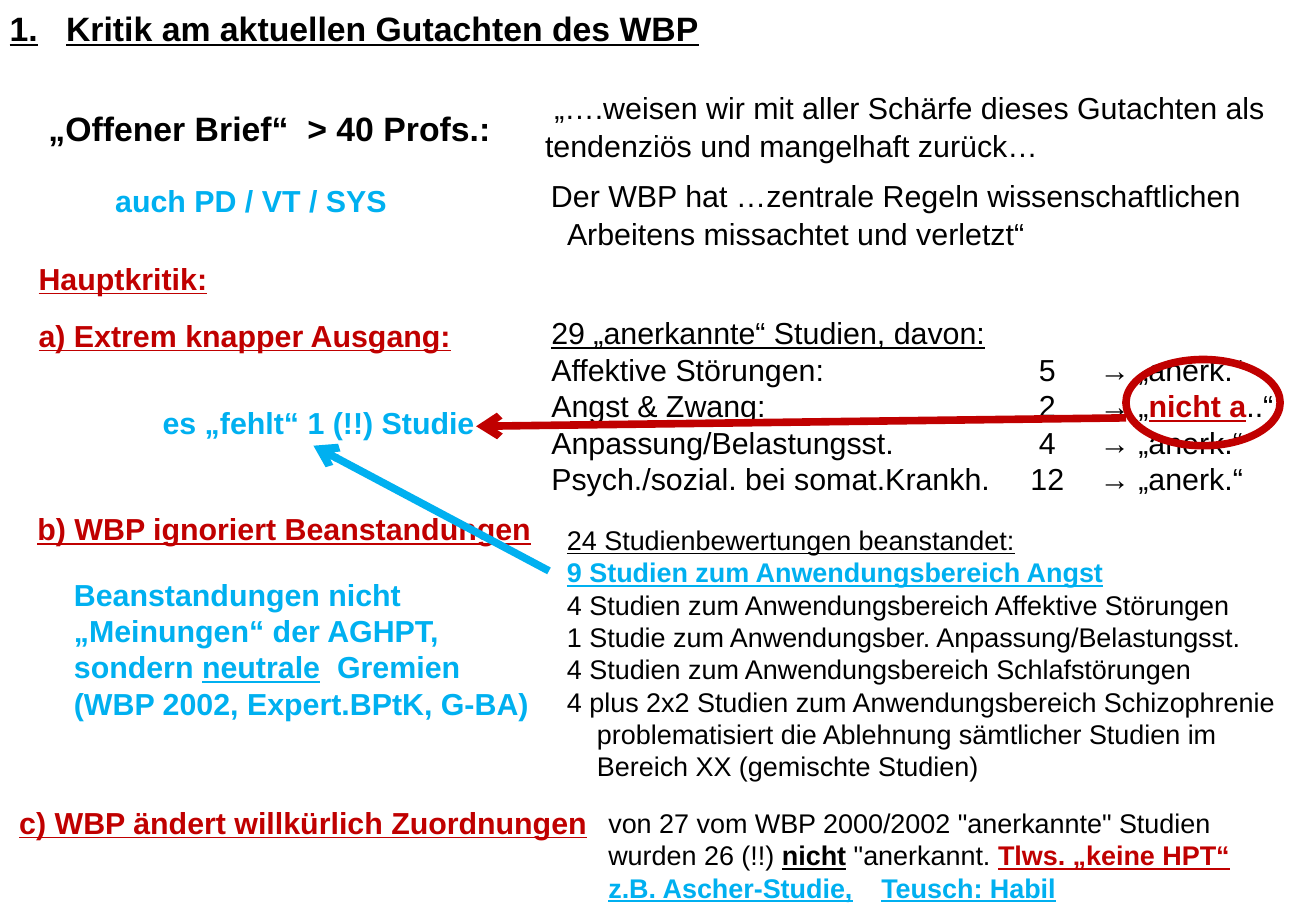
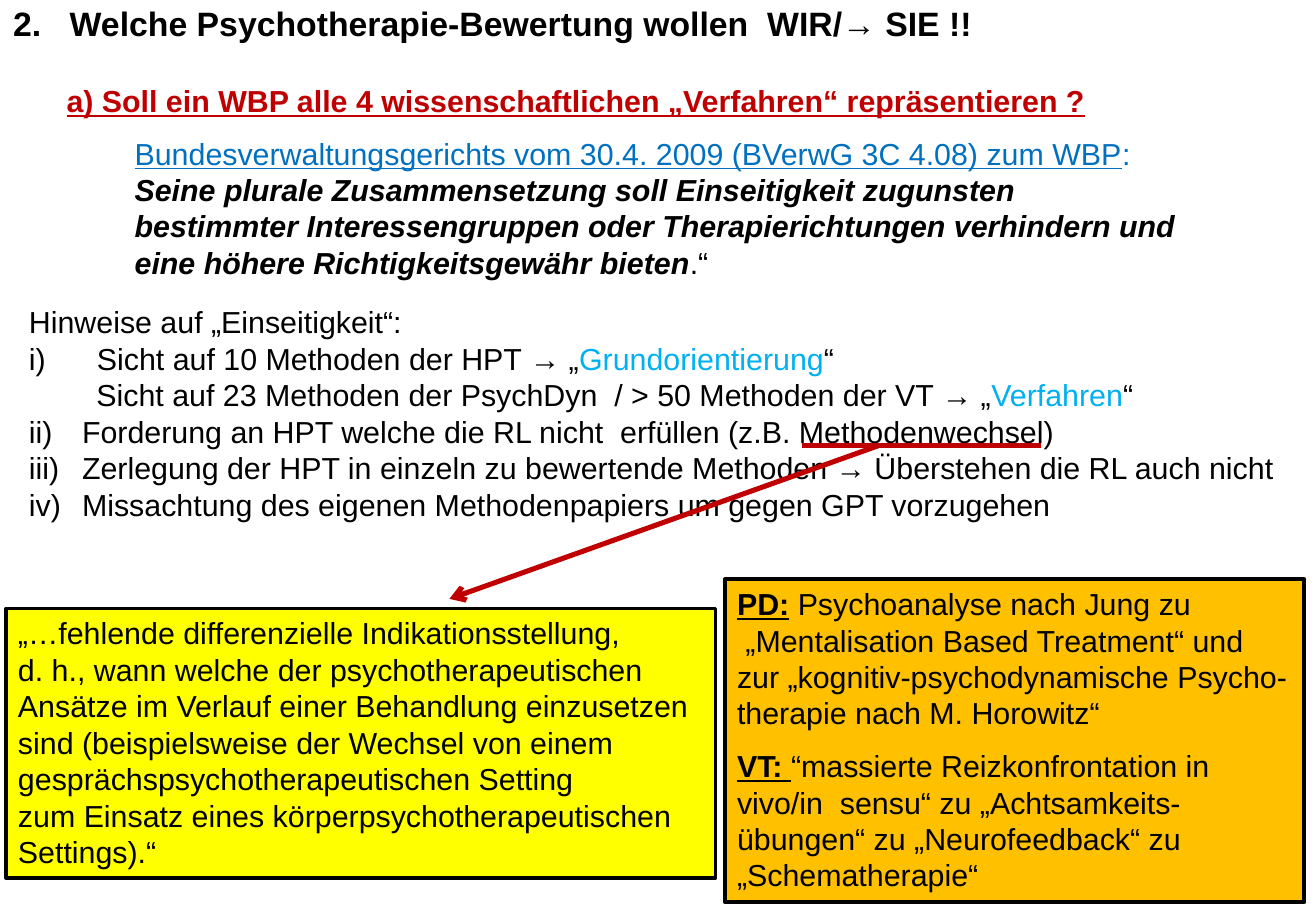
from lxml import etree
from pptx import Presentation
from pptx.dml.color import RGBColor
from pptx.enum.shapes import MSO_CONNECTOR, MSO_SHAPE
from pptx.enum.text import MSO_ANCHOR, PP_ALIGN
from pptx.oxml.ns import qn
from pptx.util import Pt

RECT, OVAL = MSO_SHAPE.RECTANGLE, MSO_SHAPE.OVAL
LINE = MSO_CONNECTOR.STRAIGHT
TOP, MIDDLE = MSO_ANCHOR.TOP, MSO_ANCHOR.MIDDLE
LEFT = PP_ALIGN.LEFT
BLACK, RED, CYAN, BLUE = "000000", "C00000", "00B0F0", "0070C0"
YELLOW, ORANGE = "FFFF00", "FFC000"


def color(code):
    return RGBColor.from_string(code)


class Deck:
    face = "Arial"
    size = 18

    def __init__(self, width, height):
        self.show = Presentation()
        self.show.slide_width, self.show.slide_height = Pt(width), Pt(height)

    def page(self, title, left, top, width, style):
        self.slide = self.show.slides.add_slide(self.show.slide_layouts[6])
        frame = self.text(left, top, width, 31.7, [title], style=style, size=20)
        frame.vertical_anchor = MIDDLE
        self.indent(frame.paragraphs[0], 33.5, -33.5)

    def style(self, run, size, ink, style):
        font = run.font
        font.name, font.size = self.face, Pt(size)
        font.color.rgb = color(ink)
        font.bold, font.italic, font.underline = (key in style for key in "biu")

    def rows(self, shape, rows, ink, style, size, lead):
        frame = shape.text_frame
        frame.word_wrap = True
        frame.vertical_anchor = TOP
        for index, row in enumerate(rows):
            para = frame.add_paragraph() if index else frame.paragraphs[0]
            para.alignment = LEFT
            para.line_spacing = Pt(lead or size * 1.2)
            if isinstance(row, str):
                para.text = row
                self.style(para.runs[0], size, ink, style)
                continue
            for text, tint, look in row:
                run = para.add_run()
                run.text = text
                self.style(run, size, tint, look)
        return frame

    def text(self, left, top, width, height, rows, ink=BLACK, style="", size=size, lead=None):
        box = self.slide.shapes.add_textbox(Pt(left), Pt(top), Pt(width), Pt(height))
        return self.rows(box, rows, ink, style, size, lead)

    def head(self, left, top, width, text):
        self.text(left, top, width, 28.8, [text], RED, "bu")

    def shape(self, kind, left, top, width, height, ink, weight, fill=None):
        shape = self.slide.shapes.add_shape(kind, Pt(left), Pt(top), Pt(width), Pt(height))
        shape.shadow.inherit = False
        if fill:
            shape.fill.solid()
            shape.fill.fore_color.rgb = color(fill)
        else:
            shape.fill.background()
        shape.line.color.rgb = color(ink)
        shape.line.width = Pt(weight)
        return shape

    def panel(self, left, top, width, height, fill, rows):
        shape = self.shape(RECT, left, top, width, height, BLACK, 2.25, fill)
        return self.rows(shape, rows, BLACK, "", self.size, None)

    def line(self, x1, y1, x2, y2, ink, weight, arrow=True):
        line = self.slide.shapes.add_connector(LINE, Pt(x1), Pt(y1), Pt(x2), Pt(y2))
        line.line.color.rgb = color(ink)
        line.line.width = Pt(weight)
        props = line._element.spPr
        if arrow:
            etree.SubElement(props.find(qn("a:ln")), qn("a:tailEnd"), type="arrow")
        etree.SubElement(props, qn("a:effectLst"))

    def indent(self, para, left, first=0):
        props = para._p.get_or_add_pPr()
        props.set("marL", str(int(Pt(left))))
        props.set("indent", str(int(Pt(first))))

    def number(self, para, left, start):
        self.indent(para, left, -left)
        etree.SubElement(para._p.get_or_add_pPr(), qn("a:buAutoNum"),
                         type="romanLcParenR", startAt=str(start))

    def tabs(self, para, *stops):
        tabs = etree.SubElement(para._p.get_or_add_pPr(), qn("a:tabLst"))
        for place, align in stops:
            etree.SubElement(tabs, qn("a:tab"), pos=str(int(Pt(place))), algn=align)


def review(deck):
    deck.page("1.\tKritik am aktuellen Gutachten des WBP", -1.4, 0.7, 529, "bu")
    deck.text(21.6, 60.5, 294.5, 31.7, ["„Offener Brief“  > 40 Profs.:"], style="b", size=20)
    quote = deck.text(316, 48.2, 463.7, 53.3, [
        "„….weisen wir mit aller Schärfe dieses Gutachten als "
        "tendenziös und mangelhaft zurück…"], lead=22.5)
    deck.indent(quote.paragraphs[0], 0, 5.5)
    rules = deck.text(314, 100.8, 438.5, 53.3, [
        "Der WBP hat …zentrale Regeln wissenschaftlichen",
        "Arbeitens missachtet und verletzt“"], lead=22.5)
    for para, left in zip(rules.paragraphs, (5.5, 15)):
        deck.indent(para, left)
    deck.text(61.2, 104.4, 177, 28.8, ["auch PD / VT / SYS"], CYAN, "b")
    deck.head(15.8, 150.5, 115, "Hauptkritik:")
    deck.head(15.8, 184.3, 272, "a) Extrem knapper Ausgang:")

    studies = deck.text(319.7, 182.9, 460, 116.6, [
        [("29 „anerkannte“ Studien, davon:", BLACK, "u")],
        "Affektive Störungen:\t5\t→ „anerk.“",
        [("Angst & Zwang:\t2\t→ „", BLACK, ""), ("nicht a", RED, "bu"), ("..“", BLACK, "")],
        "Anpassung/Belastungsst.\t4\t→ „anerk.“",
        "Psych./sozial. bei somat.Krankh.\t12\t→ „anerk.“"])
    for para in studies.paragraphs[1:]:
        deck.tabs(para, (294, "ctr"), (325, "l"))
    deck.shape(OVAL, 667.4, 213.1, 91.4, 51.1, RED, 4.5)
    deck.line(667.4, 247.7, 282.2, 252.7, RED, 4.5)
    deck.text(89.3, 236.2, 206.6, 28.8, ["es „fehlt“ 1 (!!) Studie"], CYAN, "b")

    deck.head(15.1, 298.8, 312, "b) WBP ignoriert Beanstandungen")
    claims = deck.text(329, 306.7, 437, 162.7, [
        [("24 Studienbewertungen beanstandet:", BLACK, "u")],
        [("9 Studien zum Anwendungsbereich Angst", CYAN, "bu")],
        "4 Studien zum Anwendungsbereich Affektive Störungen",
        "1 Studie zum Anwendungsber. Anpassung/Belastungsst.",
        "4 Studien zum Anwendungsbereich Schlafstörungen",
        "4 plus 2x2 Studien zum Anwendungsbereich Schizophrenie",
        "problematisiert die Ablehnung sämtlicher Studien im",
        "Bereich XX (gemischte Studien)"], size=16)
    for para in claims.paragraphs[-2:]:
        deck.indent(para, 17.8)
    deck.line(325.4, 338.4, 185.8, 264.2, CYAN, 4.5)
    deck.text(36.7, 337.7, 290, 94.3, [
        "Beanstandungen nicht",
        "„Meinungen“ der AGHPT,",
        [("sondern ", CYAN, "b"), ("neutrale", CYAN, "bu"), ("  Gremien", CYAN, "b")],
        "(WBP 2002, Expert.BPtK, G-BA)"], CYAN, "b")

    deck.head(4.3, 473, 365.8, "c) WBP ändert willkürlich Zuordnungen")
    change = deck.text(353.5, 474.5, 388, 65.5, [
        "von 27 vom WBP 2000/2002 \"anerkannte\" Studien",
        [("wurden 26 (!!) ", BLACK, ""), ("nicht", BLACK, "bu"),
         (" \"anerkannt. ", BLACK, ""), ("Tlws. „keine HPT“", RED, "bu")],
        [("z.B. Ascher-Studie,\tTeusch: Habil", CYAN, "bu")]], size=16)
    deck.tabs(change.paragraphs[2], (161.8, "l"))


def wishes(deck):
    deck.page("2.\tWelche Psychotherapie-Bewertung wollen  WIR/→ SIE !!", 0.7, -2.2, 610.6, "b")
    deck.head(32.4, 45.4, 626, "a) Soll ein WBP alle 4 wissenschaftlichen „Verfahren“ repräsentieren ?")
    deck.text(72.7, 76.3, 635, 94.3, [
        [("Bundesverwaltungsgerichts vom 30.4. 2009 (BVerwG 3C 4.08) zum WBP", BLUE, "u"),
         (":", BLUE, "")],
        [("Seine plurale Zusammensetzung soll Einseitigkeit zugunsten "
          "bestimmter Interessengruppen oder Therapierichtungen verhindern und "
          "eine höhere Richtigkeitsgewähr bieten", BLACK, "bi"), (".“", BLACK, "")]])

    hints = deck.text(10.1, 176.4, 762, 138.2, [
        "Hinweise auf „Einseitigkeit“:",
        [("Sicht auf 10 Methoden der HPT → „", BLACK, ""),
         ("Grundorientierung", CYAN, ""), ("“", BLACK, "")],
        [("Sicht auf 23 Methoden der PsychDyn  / > 50 Methoden der VT → „", BLACK, ""),
         ("Verfahren", CYAN, ""), ("“", BLACK, "")],
        "Forderung an HPT welche die RL nicht  erfüllen (z.B. Methodenwechsel)",
        "Zerlegung der HPT in einzeln zu bewertende Methoden → Überstehen die RL auch nicht",
        "Missachtung des eigenen Methodenpapiers um gegen GPT vorzugehen"]).paragraphs
    deck.number(hints[1], 40.3, 1)
    deck.indent(hints[2], 40)
    for para in hints[3:]:
        deck.number(para, 31.5, 2)

    deck.panel(3.6, 360.7, 420.5, 159.8, YELLOW, [
        "„…fehlende differenzielle Indikationsstellung,",
        "d. h., wann welche der psychotherapeutischen",
        "Ansätze im Verlauf einer Behandlung einzusetzen",
        "sind (beispielsweise der Wechsel von einem",
        "gesprächspsychotherapeutischen Setting",
        "zum Einsatz eines körperpsychotherapeutischen",
        "Settings).“"])
    shifts = deck.panel(429.8, 343.4, 343.4, 191.5, ORANGE, [
        [("PD:", BLACK, "bu"), (" Psychoanalyse nach Jung zu", BLACK, "")],
        "„Mentalisation Based Treatment“ und",
        "zur „kognitiv-psychodynamische Psycho-",
        "therapie nach M. Horowitz“",
        [("VT: ", BLACK, "bu"), ("“massierte Reizkonfrontation in", BLACK, "")],
        "vivo/in  sensu“ zu „Achtsamkeits-",
        "übungen“ zu „Neurofeedback“ zu",
        "„Schematherapie“"]).paragraphs
    deck.indent(shifts[1], 5)
    shifts[4].space_before = Pt(9.6)

    deck.line(520.6, 264.2, 266.4, 355, RED, 3)
    deck.line(475.2, 264.2, 617, 264.2, RED, 3, arrow=False)


def main():
    deck = Deck(780, 540)
    review(deck)
    wishes(deck)
    deck.show.save("out.pptx")


if __name__ == "__main__":
    main()
